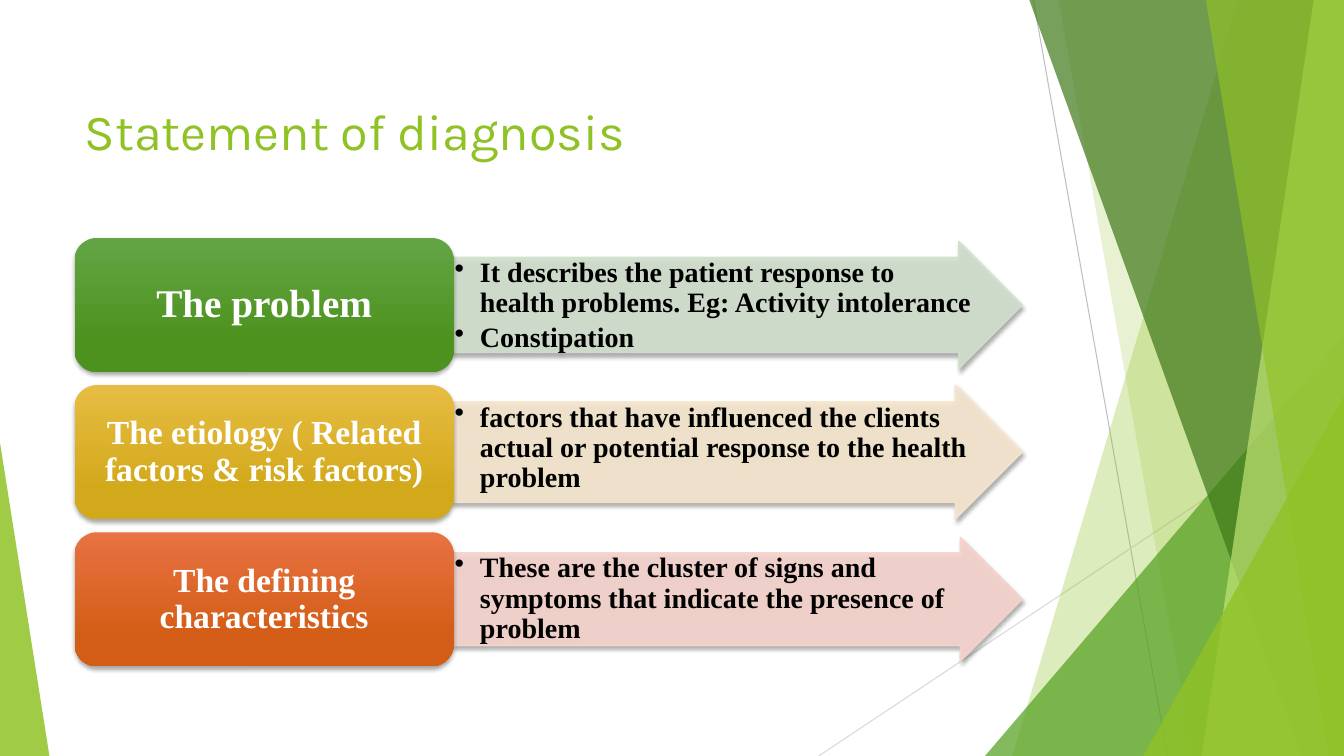
from lxml import etree
from pptx import Presentation
from pptx.dml.color import RGBColor
from pptx.enum.shapes import MSO_CONNECTOR, MSO_SHAPE
from pptx.enum.text import MSO_ANCHOR, MSO_AUTO_SIZE, PP_ALIGN
from pptx.oxml.ns import qn
from pptx.util import Inches, Pt

STRAIGHT = MSO_CONNECTOR.STRAIGHT
TRIANGLE, ARROW, ROUNDED = MSO_SHAPE.ISOSCELES_TRIANGLE, MSO_SHAPE.RIGHT_ARROW, MSO_SHAPE.ROUNDED_RECTANGLE
TOP, MIDDLE = MSO_ANCHOR.TOP, MSO_ANCHOR.MIDDLE
LEFT, CENTER = PP_ALIGN.LEFT, PP_ALIGN.CENTER
NO_AUTOFIT = MSO_AUTO_SIZE.NONE

WHITE, BLACK = RGBColor(255, 255, 255), RGBColor(0, 0, 0)
LIME, LEAF = RGBColor(0x90, 0xC2, 0x26), RGBColor(0x54, 0xA0, 0x21)
FOREST, PALE_LIME = RGBColor(0x3F, 0x78, 0x19), RGBColor(0xC0, 0xE4, 0x74)
GREY, LIGHT_GREY = RGBColor(0xBF, 0xBF, 0xBF), RGBColor(0xD9, 0xD9, 0xD9)
GREEN_TOP, GREEN, GREEN_TINT = RGBColor(0x63, 0xA5, 0x45), RGBColor(0x4D, 0x92, 0x1E), RGBColor(0xD1, 0xDF, 0xCD)
GOLD_TOP, GOLD, GOLD_TINT = RGBColor(0xE7, 0xBC, 0x43), RGBColor(0xD2, 0xA9, 0x1B), RGBColor(0xF5, 0xE6, 0xCD)
ORANGE_TOP, ORANGE, ORANGE_TINT = RGBColor(0xE8, 0x72, 0x42), RGBColor(0xD3, 0x5D, 0x16), RGBColor(0xF6, 0xD3, 0xCC)

LEFT_EDGE, LABEL_WIDTH, ARROW_WIDTH = 5.55, 28.21, 42.31
FIRST_ROW, ROW_PITCH, ROW_HEIGHT = 31.47, 19.47, 17.73

ROWS = [
    ("The problem", 28, GREEN_TOP, GREEN, GREEN_TINT, 16.8,
     ["It describes the patient response to health problems. Eg: Activity intolerance", "Constipation"]),
    ("The etiology ( Related factors & risk factors)", 24, GOLD_TOP, GOLD, GOLD_TINT, 17.73,
     ["factors that have influenced the clients actual or potential response to the health problem"]),
    ("The defining characteristics", 24, ORANGE_TOP, ORANGE, ORANGE_TINT, 16.4,
     ["These are the cluster of signs and symptoms that indicate the presence of problem"]),
]


class SlideBuilder:
    title_font, body_font = "Karla", "Times New Roman"

    def __init__(self, deck):
        self.column, self.row = deck.slide_width / 100, deck.slide_height / 100
        self.slide = deck.slides.add_slide(deck.slide_layouts[5])
        self.shapes = self.slide.shapes

    def place(self, x, y):
        return round(x * self.column), round(y * self.row)

    def title(self, text, x, y, width, height):
        box = self.shapes.title
        box.left, box.top = self.place(x, y)
        box.width, box.height = self.place(width, height)
        self.set_text(box, [text], self.title_font, 36, LIME, TOP, LEFT)

    def line(self, start, end, color):
        line = self.shapes.add_connector(STRAIGHT, *self.place(*start), *self.place(*end))
        line.line.color.rgb = color
        line.line.width = Pt(0.75)
        etree.SubElement(line._element.spPr, qn("a:effectLst"))

    def facet(self, top_x, bottom_x, color, opacity):
        builder = self.shapes.build_freeform(*self.place(top_x, 0))
        corners = [(100, 0), (100, 100), (bottom_x, 100)]
        builder.add_line_segments([self.place(*corner) for corner in corners])
        self.paint(builder.convert_to_shape(), color, opacity)

    def corner(self, x, y, width, apex, color, opacity):
        shape = self.preset(TRIANGLE, x, y, width, 100 - y, [apex])
        self.paint(shape, color, opacity)

    def label(self, text, size, x, y, width, height, top_color, color):
        box = self.preset(ROUNDED, x, y, width, height)
        box.fill.gradient()
        box.fill.gradient_angle = 270
        for stop, position, shade in zip(box.fill.gradient_stops, (0, 0.78), (top_color, color)):
            stop.position = position
            stop.color.rgb = shade
        box.line.fill.background()
        self.drop_shadow(box)
        self.set_text(box, [text], self.body_font, size, WHITE, MIDDLE, CENTER, 0.12, 0.06,
                      bold=True, spacing=0.9)

    def arrow(self, points, x, y, width, height, color):
        box = self.preset(ARROW, x, y, width, height, [0.75, 0.5])
        self.paint(box, color, 90, outlined=True)
        self.drop_shadow(box)
        self.set_text(box, points, self.body_font, 20, BLACK, TOP, LEFT, 0.01, 0.01,
                      bold=True, spacing=0.9, bulleted=True)

    def preset(self, kind, x, y, width, height, adjustments=()):
        shape = self.shapes.add_shape(kind, *self.place(x, y), *self.place(width, height))
        for index, value in enumerate(adjustments):
            shape.adjustments[index] = value
        shape.shadow.inherit = False
        return shape

    def paint(self, shape, color, opacity, outlined=False):
        shape.shadow.inherit = False
        shape.fill.solid()
        shape.fill.fore_color.rgb = color
        if outlined:
            shape.line.color.rgb = color
            shape.line.width = Pt(1)
        else:
            shape.line.fill.background()
        for tone in shape._element.spPr.iter(qn("a:srgbClr")):
            etree.SubElement(tone, qn("a:alpha"), val=str(opacity * 1000))

    def drop_shadow(self, shape):
        effects = shape._element.spPr.find(qn("a:effectLst"))
        shadow = etree.SubElement(effects, qn("a:outerShdw"), blurRad=str(Pt(3)), dist=str(Pt(2)),
                                  dir="5400000", rotWithShape="0")
        tone = etree.SubElement(shadow, qn("a:srgbClr"), val=str(BLACK))
        etree.SubElement(tone, qn("a:alpha"), val="35000")

    def set_text(self, box, texts, font, size, color, anchor, align, side=0.1, edge=0.05,
                 bold=False, spacing=1.0, bulleted=False):
        frame = box.text_frame
        frame.text = "\n".join(texts)
        frame.word_wrap = True
        frame.auto_size = NO_AUTOFIT
        frame.vertical_anchor = anchor
        frame.margin_left = frame.margin_right = Inches(side)
        frame.margin_top = frame.margin_bottom = Inches(edge)
        for para in frame.paragraphs:
            para.alignment = align
            para.line_spacing = spacing
            if bulleted:
                para.space_after = Pt(3)
                properties = para._p.get_or_add_pPr()
                properties.set("marL", str(Inches(0.25)))
                properties.set("indent", str(-Inches(0.25)))
                etree.SubElement(properties, qn("a:buChar"), char="•")
            para.font.name = font
            para.font.size = Pt(size)
            para.font.bold = bold
            para.font.color.rgb = color


def main():
    deck = Presentation()
    deck.slide_width, deck.slide_height = Inches(13.33), Inches(7.5)
    page = SlideBuilder(deck)

    page.line((76.89, 0), (86.87, 100), GREY)
    page.line((100, 53.73), (60.92, 100), LIGHT_GREY)
    page.facet(92.12, 75.32, LIME, 30)
    page.facet(78.77, 88.75, LIME, 20)
    page.corner(73.29, 44.4, 26.71, 1, LEAF, 72)
    page.facet(76.59, 96.85, FOREST, 70)
    page.facet(97.75, 89.42, PALE_LIME, 70)
    page.facet(89.72, 98.87, LIME, 65)
    page.corner(85.07, 52.4, 14.93, 1, LIME, 80)
    page.corner(0, 58.53, 3.68, 0, LIME, 85)

    page.title("Statement of diagnosis", LEFT_EDGE, 12.53, 70.52, 13.07)
    for index, (name, size, top_color, color, tint, arrow_height, points) in enumerate(ROWS):
        y = FIRST_ROW + index * ROW_PITCH
        arrow_y = y + (ROW_HEIGHT - arrow_height) / 2
        page.arrow(points, LEFT_EDGE + LABEL_WIDTH, arrow_y, ARROW_WIDTH, arrow_height, tint)
        page.label(name, size, LEFT_EDGE, y, LABEL_WIDTH, ROW_HEIGHT, top_color, color)
    deck.save("out.pptx")


if __name__ == "__main__":
    main()
